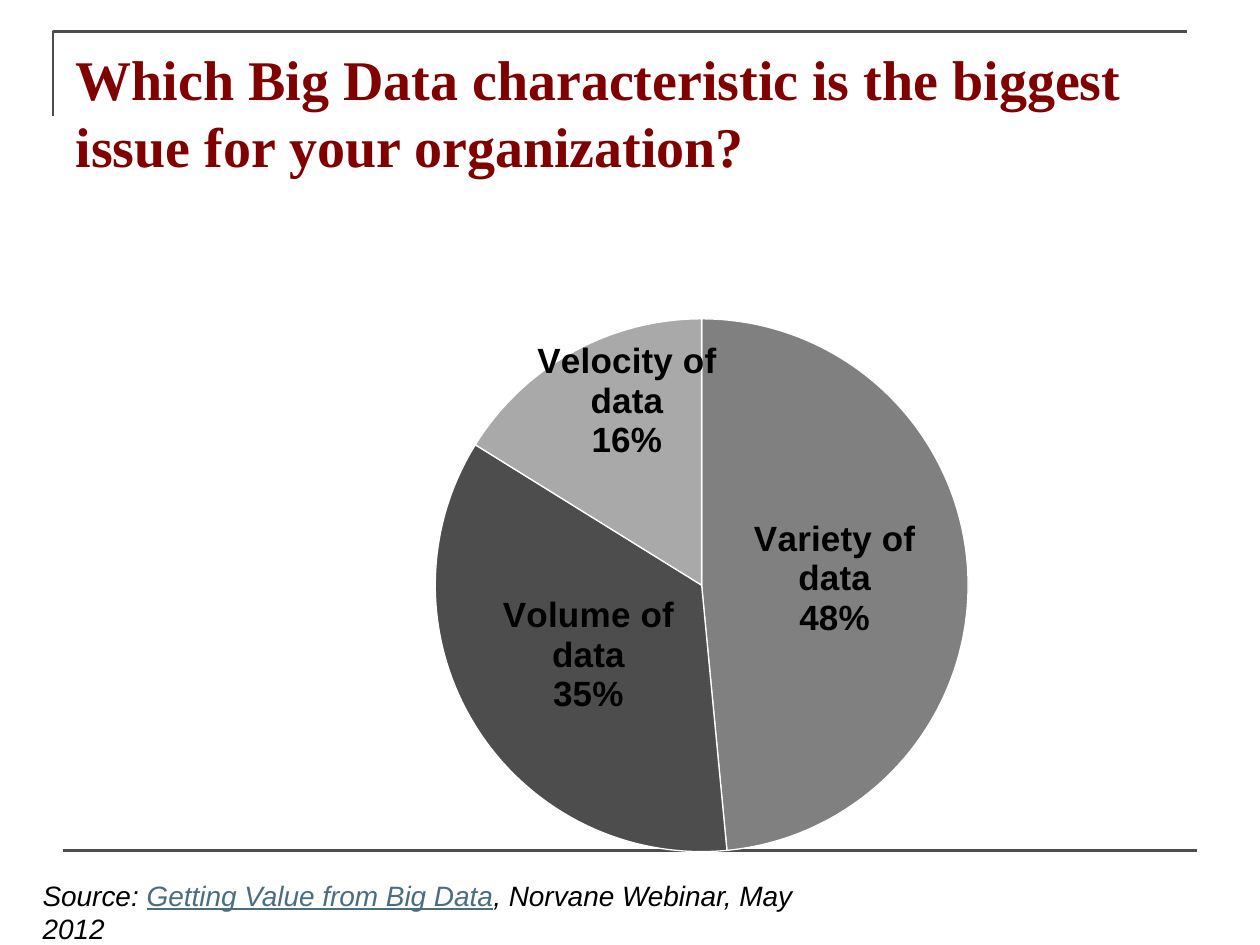
from copy import deepcopy
from lxml import etree
from pptx import Presentation
from pptx import util as u
from pptx.chart.data import CategoryChartData
from pptx.dml.color import RGBColor
from pptx.enum import chart as charts, shapes, text
from pptx.oxml import parse_xml
from pptx.oxml.ns import nsdecls, qn

COLORS = {
    "rule": "4D4D4D", "title": "800000", "body": "000000", "link": "4C6D80",
    "variety": "808080", "volume": "4D4D4D", "velocity": "A9A9A9", "edge": "FFFFFF",
}
SHARES = [
    ("Variety of data", 0.48, "variety"),
    ("Volume of data", 0.35, "volume"),
    ("Velocity of data", 0.16, "velocity"),
]


def color(name):
    return RGBColor.from_string(COLORS[name])


def inches(*lengths):
    return [u.Inches(length) for length in lengths]


def style_font(font, name, size, shade, bold=False, italic=False):
    font.name, font.size = name, u.Pt(size)
    font.bold, font.italic = bold, italic
    font.color.rgb = color(shade)


def style_rule(shape):
    shape.line.color.rgb = color("rule")
    shape.line.width = u.Pt(1.5)


def manual_layout(**settings):
    parts = "".join(f'<c:{tag} val="{value}"/>' for tag, value in settings.items())
    return parse_xml(f'<c:layout {nsdecls("c")}><c:manualLayout>{parts}'
                     '</c:manualLayout></c:layout>')


def add_frame(page, left, top, width, height):
    builder = page.shapes.build_freeform(*inches(left, top + height))
    builder.add_line_segments([inches(left, top), inches(left + width, top)], close=False)
    corner = builder.convert_to_shape()
    corner.fill.background()
    corner.shadow.inherit = False
    style_rule(corner)


def add_footer_rule(page, left, top, width):
    rule = page.shapes.add_connector(
        shapes.MSO_CONNECTOR.STRAIGHT, *inches(left, top, left + width, top))
    style_rule(rule)
    etree.SubElement(rule._element.spPr, qn("a:effectLst"))


def place_title(page, left, top, width, height):
    title = page.shapes.title
    title.left, title.top, title.width, title.height = inches(left, top, width, height)
    frame = title.text_frame
    frame.text = "Which Big Data characteristic is the biggest issue for your organization?"
    frame.vertical_anchor = text.MSO_ANCHOR.TOP
    frame.auto_size = text.MSO_AUTO_SIZE.NONE
    para = frame.paragraphs[0]
    para.alignment = text.PP_ALIGN.LEFT
    style_font(para.runs[0].font, "Times New Roman", 32, "title", bold=True)


def add_share_pie(page, left, top, width, height):
    data = CategoryChartData(number_format="0%")
    data.categories = [name for name, _, _ in SHARES]
    data.add_series("Series 1", [share for _, share, _ in SHARES])
    chart = page.shapes.add_chart(
        charts.XL_CHART_TYPE.PIE, *inches(left, top, width, height), data).chart
    chart.has_legend = False
    chart.has_title = False
    style_font(chart.font, "Arial", 18, "body")

    diameter = 4.23
    plot_area = chart._chartSpace.chart.plotArea
    for old in plot_area.findall(qn("c:layout")):
        plot_area.remove(old)
    plot_area.insert(0, manual_layout(
        layoutTarget="inner", xMode="edge", yMode="edge",
        x=round((3.45 - left) / width, 3), y=round((2.53 - top) / height, 3),
        w=round(diameter / width, 3), h=round(diameter / height, 3)))

    plot = chart.plots[0]
    plot.vary_by_categories = True
    series = plot.series[0]
    for index, (_, _, shade) in enumerate(SHARES):
        slice_format = series.points[index].format
        slice_format.fill.solid()
        slice_format.fill.fore_color.rgb = color(shade)
        slice_format.line.color.rgb = color("edge")
        slice_format.line.width = u.Pt(0.75)

    labels = series.data_labels
    labels.show_category_name = True
    labels.show_value = True
    labels.show_percentage = False
    labels.number_format = "0%"
    labels.number_format_is_linked = False
    labels.position = charts.XL_LABEL_POSITION.CENTER
    style_font(labels.font, "Arial", 20, "body", bold=True)
    shift_label(labels._element, 2, -0.01, -0.1)


def shift_label(labels, index, x, y):
    for leader in labels.findall(qn("c:showLeaderLines")):
        labels.remove(leader)
    separator = parse_xml(f'<c:separator {nsdecls("c")}>\n</c:separator>')
    labels.find(qn("c:showBubbleSize")).addnext(separator)
    label = parse_xml(f'<c:dLbl {nsdecls("c")}><c:idx val="{index}"/></c:dLbl>')
    label.append(manual_layout(x=x, y=y))
    label.extend([deepcopy(setting) for setting in labels])
    labels.insert(0, label)


def add_source(page, left, top, width, height):
    box = page.shapes.add_textbox(*inches(left, top, width, height))
    box.text_frame.word_wrap = True
    para = box.text_frame.paragraphs[0]
    for words, shade in [("Source: ", "body"), ("Getting Value from Big Data", "link"),
                         (", Norvane Webinar, May 2012", "body")]:
        span = para.add_run()
        span.text = words
        style_font(span.font, "Arial", 16, shade, italic=True)
        span.font.underline = shade == "link"


def main():
    deck = Presentation()
    deck.slide_width, deck.slide_height = inches(10, 7.5)
    page = deck.slides.add_slide(deck.slide_layouts[5])
    add_frame(page, 0.42, 0.25, 9, 0.67)
    add_footer_rule(page, 0.5, 6.75, 9)
    place_title(page, 0.5, 0.3, 9, 1.25)
    add_share_pie(page, 1.2, 1.55, 7.88, 5.36)
    add_source(page, 0.24, 6.92, 6.17, 0.37)
    deck.save("out.pptx")


if __name__ == "__main__":
    main()
